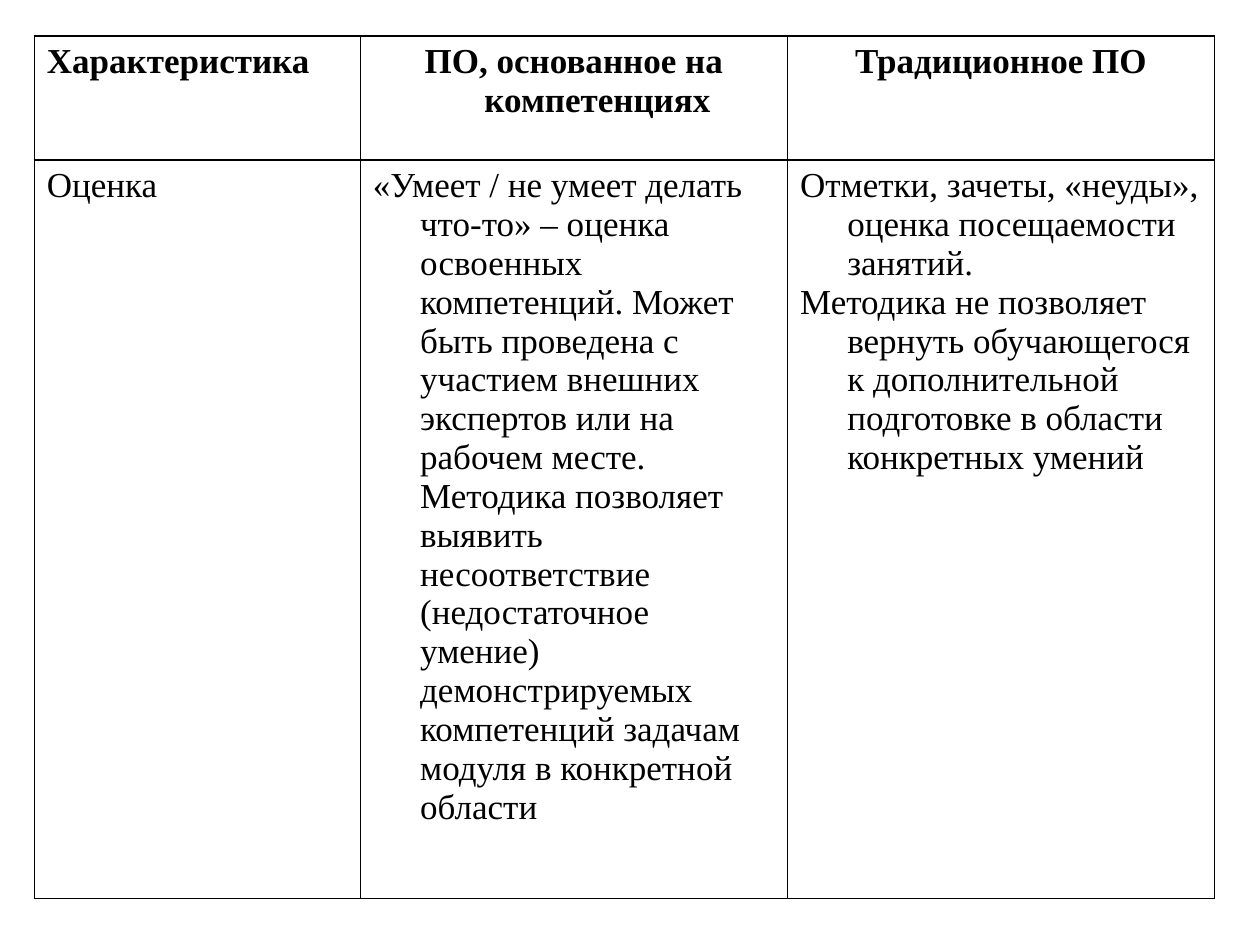
from lxml import etree
from pptx import Presentation
from pptx.dml.color import RGBColor
from pptx.enum import text
from pptx.oxml import ns
from pptx.util import Pt

BLACK = RGBColor(0, 0, 0)
WHITE = RGBColor(255, 255, 255)
FONT = "Times New Roman"
INDENT = Pt(27)
LEFT, TOP = 19.6, 20.5
COLUMN_WIDTHS = [186.3, 244.1, 244.1]
ROW_HEIGHTS = [71, 422]

JUSTIFY = text.PP_ALIGN.JUSTIFY
CENTER = text.PP_ALIGN.CENTER
START = text.PP_ALIGN.LEFT

ROWS = [
    [
        (JUSTIFY, ["Характеристика "]),
        (CENTER, ["ПО, основанное на компетенциях"]),
        (CENTER, ["Традиционное ПО"]),
    ],
    [
        (JUSTIFY, ["Оценка "]),
        (START, [
            "«Умеет / не умеет делать что-то» – оценка освоенных компетенций. "
            "Может быть проведена с участием внешних экспертов или на рабочем месте. "
            "Методика позволяет выявить несоответствие (недостаточное умение) "
            "демонстрируемых компетенций задачам модуля в конкретной области",
        ]),
        (START, [
            "Отметки, зачеты, «неуды», оценка посещаемости занятий.",
            "Методика не позволяет вернуть обучающегося к дополнительной "
            "подготовке в области конкретных умений",
        ]),
    ],
]


def add_borders(cell):
    properties = cell._tc.get_or_add_tcPr()
    for position, side in enumerate(("lnL", "lnR", "lnT", "lnB")):
        line = etree.Element(ns.qn(f"a:{side}"), w=str(Pt(1)))
        fill = etree.SubElement(line, ns.qn("a:solidFill"))
        etree.SubElement(fill, ns.qn("a:srgbClr"), val=str(BLACK))
        properties.insert(position, line)


def fill_cell(cell, alignment, lines, bold):
    cell.fill.solid()
    cell.fill.fore_color.rgb = WHITE
    add_borders(cell)
    cell.text_frame.text = "\n".join(lines)
    for para in cell.text_frame.paragraphs:
        para.alignment = alignment
        properties = para._p.get_or_add_pPr()
        properties.set("marL", str(INDENT))
        properties.set("indent", str(-INDENT))
        for span in para.runs:
            span.font.name = FONT
            span.font.size = Pt(20)
            span.font.bold = bold
            span.font.color.rgb = BLACK


def main():
    deck = Presentation()
    deck.slide_width, deck.slide_height = Pt(720), Pt(540)
    page = deck.slides.add_slide(deck.slide_layouts[6])
    table = page.shapes.add_table(
        len(ROWS), len(COLUMN_WIDTHS), Pt(LEFT), Pt(TOP),
        Pt(sum(COLUMN_WIDTHS)), Pt(sum(ROW_HEIGHTS)),
    ).table
    for column, width in zip(table.columns, COLUMN_WIDTHS):
        column.width = Pt(width)
    for row_index, (height, cells) in enumerate(zip(ROW_HEIGHTS, ROWS)):
        table.rows[row_index].height = Pt(height)
        for column_index, (alignment, lines) in enumerate(cells):
            fill_cell(table.cell(row_index, column_index), alignment, lines, row_index == 0)
    deck.save("out.pptx")


if __name__ == "__main__":
    main()
